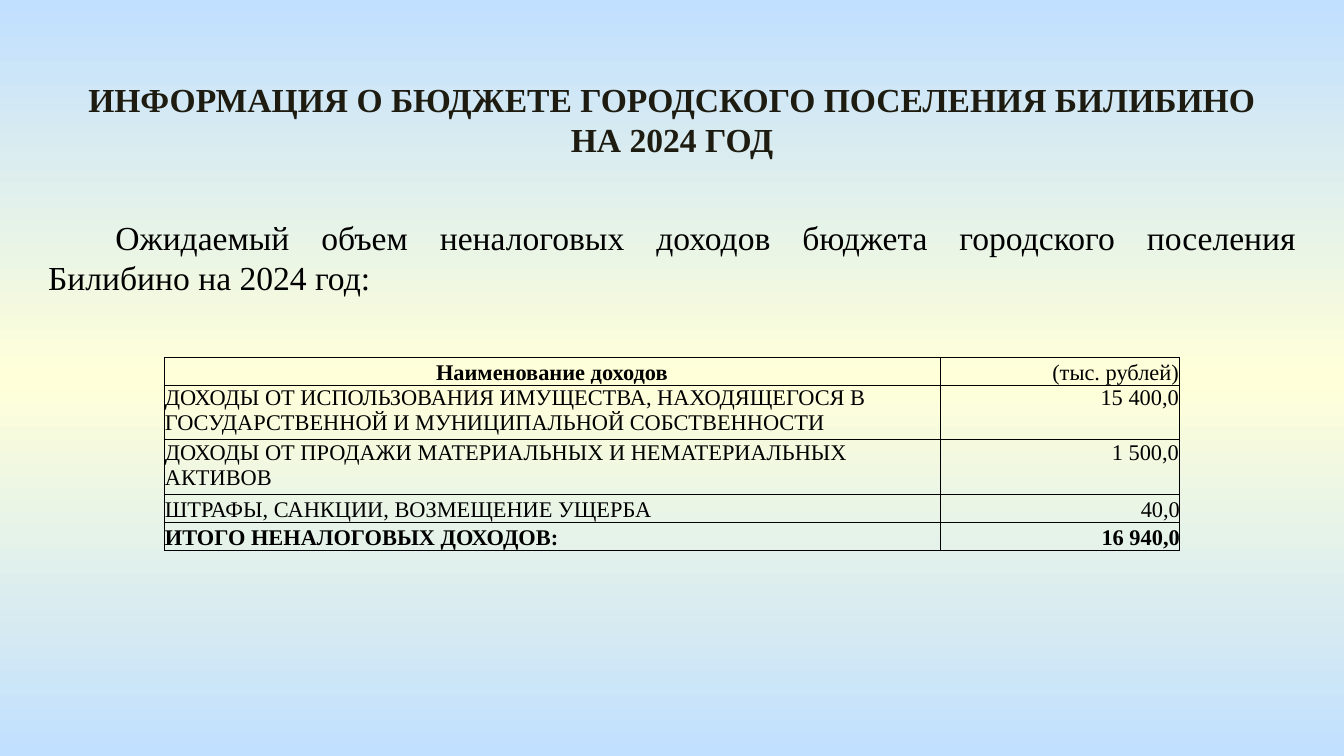
from copy import deepcopy

from lxml.etree import SubElement
from pptx import Presentation
from pptx.dml.color import RGBColor
from pptx.enum.text import MSO_ANCHOR, MSO_AUTO_SIZE, PP_ALIGN
from pptx.oxml.ns import qn
from pptx.util import Pt

EMU_PER_PX = 914400 / 134.4
FONT = "Times New Roman"
BLACK = "000000"
TITLE = "ИНФОРМАЦИЯ О БЮДЖЕТЕ ГОРОДСКОГО ПОСЕЛЕНИЯ БИЛИБИНО НА 2024 ГОД"
INTRO = "\tОжидаемый объем неналоговых доходов бюджета городского поселения Билибино на 2024 год:"
COLUMN_WIDTHS = [776, 240]
INCOME_ROWS = [
    (28, MSO_ANCHOR.BOTTOM, 1, "Наименование доходов", "(тыс. рублей)"),
    (54, MSO_ANCHOR.TOP, 1,
     "ДОХОДЫ ОТ ИСПОЛЬЗОВАНИЯ ИМУЩЕСТВА, НАХОДЯЩЕГОСЯ В ГОСУДАРСТВЕННОЙ И МУНИЦИПАЛЬНОЙ СОБСТВЕННОСТИ",
     "15 400,0"),
    (54, MSO_ANCHOR.TOP, 1,
     "ДОХОДЫ ОТ ПРОДАЖИ МАТЕРИАЛЬНЫХ И НЕМАТЕРИАЛЬНЫХ АКТИВОВ", "1 500,0"),
    (28, MSO_ANCHOR.BOTTOM, 0, "ШТРАФЫ, САНКЦИИ, ВОЗМЕЩЕНИЕ УЩЕРБА", "40,0"),
    (28, MSO_ANCHOR.BOTTOM, 0, "ИТОГО НЕНАЛОГОВЫХ ДОХОДОВ:", "16 940,0"),
]


def px(length):
    return round(length * EMU_PER_PX)


def color(value):
    return RGBColor.from_string(value)


def format_para(para, size, align, bold=False, ink=BLACK):
    para.alignment = align
    for span in para.runs:
        span.font.name = FONT
        span.font.size = Pt(size)
        span.font.bold = bold
        span.font.color.rgb = color(ink)


def paint_background(page, stops):
    fill = page.background.fill
    fill.gradient()
    fill.gradient_angle = 270
    stop_list = next(page.background._cSld.iter(qn("a:gsLst")))
    stop_list.insert(1, deepcopy(stop_list[0]))
    for stop, (position, value) in zip(fill.gradient_stops, stops):
        stop.position = position
        stop.color.rgb = color(value)


def add_text(page, left, top, width, height, text, align, bold=False, ink=BLACK):
    box = page.shapes.add_textbox(px(left), px(top), px(width), px(height))
    frame = box.text_frame
    frame.word_wrap = True
    frame.auto_size = MSO_AUTO_SIZE.SHAPE_TO_FIT_TEXT
    frame.text = text
    format_para(frame.paragraphs[0], 18, align, bold, ink)


def add_borders(cell):
    properties = cell._tc.get_or_add_tcPr()
    for index, side in enumerate(["lnL", "lnR", "lnT", "lnB"]):
        line = SubElement(properties, qn(f"a:{side}"), w=str(Pt(0.5)))
        fill = SubElement(line, qn("a:solidFill"))
        SubElement(fill, qn("a:srgbClr"), val=BLACK)
        properties.insert(index, line)


def fill_cell(cell, text, align, bold, anchor, value_inset):
    cell.text = text
    format_para(cell.text_frame.paragraphs[0], 12, align, bold)
    cell.vertical_anchor = anchor
    cell.margin_left = cell.margin_right = cell.margin_top = px(value_inset)
    cell.margin_bottom = 0
    cell.fill.background()
    add_borders(cell)


def add_income_table(page, left, top):
    heights = [row[0] for row in INCOME_ROWS]
    frame = page.shapes.add_table(
        len(INCOME_ROWS), len(COLUMN_WIDTHS), px(left), px(top),
        px(sum(COLUMN_WIDTHS)), px(sum(heights)))
    table = frame.table
    table.first_row = table.horz_banding = False
    for column, width in zip(table.columns, COLUMN_WIDTHS):
        column.width = px(width)
    last = len(INCOME_ROWS) - 1
    for index, (height, anchor, value_inset, name, amount) in enumerate(INCOME_ROWS):
        table.rows[index].height = px(height)
        name_align = PP_ALIGN.CENTER if index == 0 else PP_ALIGN.LEFT
        fill_cell(table.cell(index, 0), name, name_align, index in (0, last), anchor, 1)
        fill_cell(table.cell(index, 1), amount, PP_ALIGN.RIGHT, index == last, anchor, value_inset)


def build_budget_page(deck):
    page = deck.slides.add_slide(deck.slide_layouts[6])
    paint_background(page, [(0, "C1E0FF"), (0.5, "FFFFD9"), (1, "C1E0FF")])
    add_text(page, 53, 72, 1238, 95, TITLE, PP_ALIGN.CENTER, True, "1E1C11")
    add_text(page, 35, 210, 1275, 95, INTRO, PP_ALIGN.JUSTIFY)
    add_income_table(page, 164, 357)


def main():
    deck = Presentation()
    deck.slide_width = px(1344)
    deck.slide_height = px(756)
    build_budget_page(deck)
    deck.save("out.pptx")


if __name__ == "__main__":
    main()
